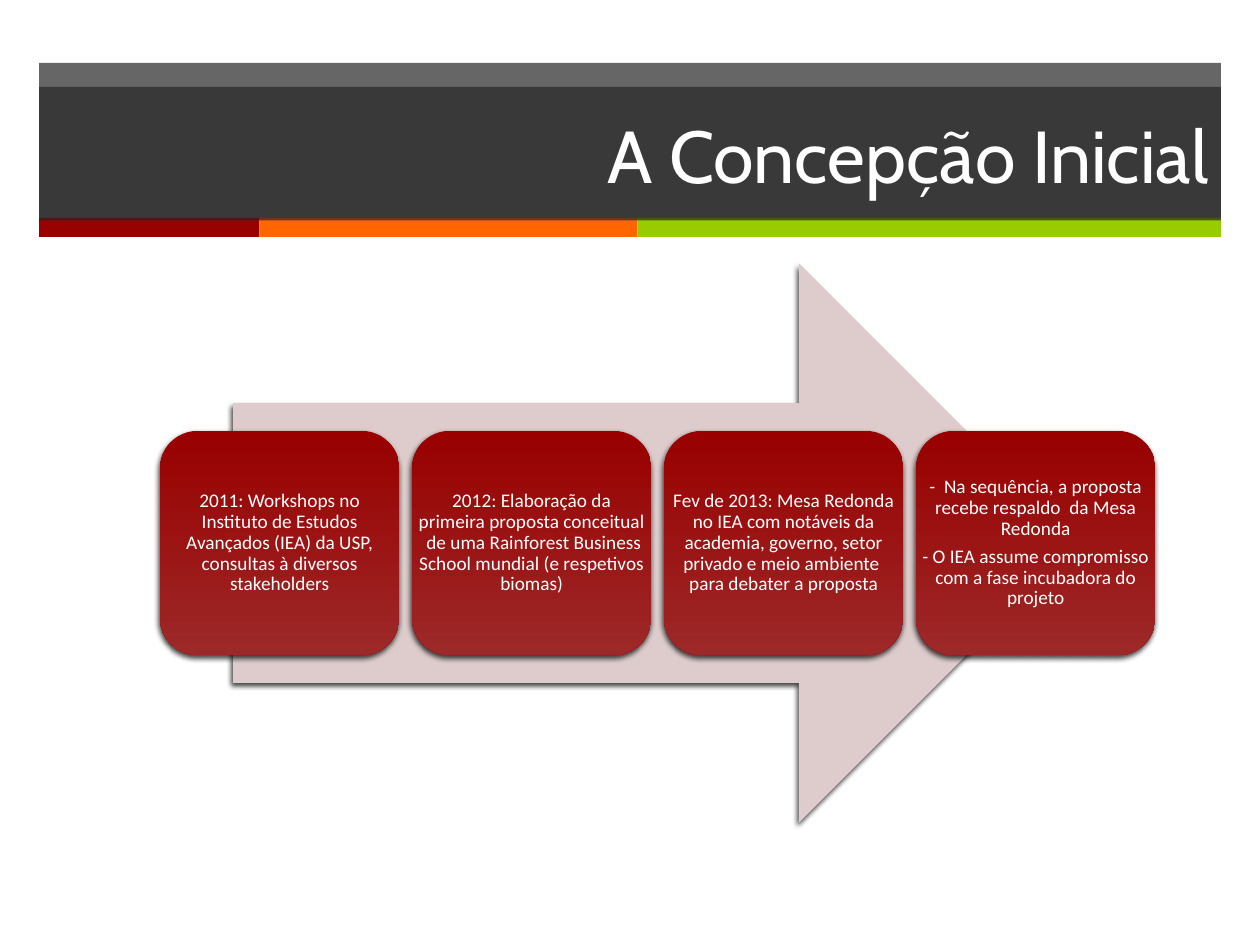
import pptx
import pptx.util
import pptx.dml.color
import pptx.enum.shapes
import pptx.enum.text
import pptx.oxml
from pptx.oxml.ns import nsdecls, qn
from lxml import etree

Inches = pptx.util.Inches
Pt = pptx.util.Pt
Shape = pptx.enum.shapes.MSO_SHAPE
Align = pptx.enum.text.PP_ALIGN
Anchor = pptx.enum.text.MSO_ANCHOR

TITLE = "A Concepção Inicial"
STRIPES = [(1.75, "990000"), (3, "FF6600"), (4.63, "99CC00")]
STEPS = [
    ["2011: Workshops no Instituto de Estudos Avançados (IEA) da USP, consultas à diversos stakeholders"],
    ["2012: Elaboração da primeira proposta conceitual  de uma Rainforest Business School mundial (e respetivos biomas)"],
    ["Fev de 2013: Mesa Redonda no IEA com notáveis da academia, governo, setor privado e meio ambiente  para debater a proposta"],
    ["-  Na sequência, a proposta recebe respaldo  da Mesa Redonda",
     "- O IEA assume compromisso com a fase incubadora do projeto"],
]
BAND_LEFT, BAND_WIDTH = 0.31, 9.38
STEP_LEFT, STEP_TOP, STEP_WIDTH, STEP_HEIGHT, STEP_PITCH = 1.27, 3.42, 1.9, 1.78, 2


def color(value):
    return pptx.dml.color.RGBColor.from_string(value)


def fill_solid(shape, value, opacity=100):
    shape.fill.solid()
    shape.fill.fore_color.rgb = color(value)
    if opacity < 100:
        tint = shape.fill._xPr.find(qn("a:solidFill"))[0]
        etree.SubElement(tint, qn("a:alpha")).set("val", str(opacity * 1000))


def add_block(slide, kind, left, top, width, height):
    shape = slide.shapes.add_shape(kind, Inches(left), Inches(top), Inches(width), Inches(height))
    shape.shadow.inherit = False
    shape.line.fill.background()
    return shape


def add_shadow(shape):
    effects = shape.element.spPr.find(qn("a:effectLst"))
    effects.append(pptx.oxml.parse_xml(
        f'<a:outerShdw {nsdecls("a")} blurRad="{Pt(3)}" dist="{Pt(2)}" dir="{110 * 60000}" rotWithShape="0">'
        '<a:srgbClr val="000000"><a:alpha val="75000"/></a:srgbClr></a:outerShdw>'))


def write(paragraph, text, font, size, alignment):
    paragraph.alignment = alignment
    run = paragraph.add_run()
    run.text = text
    run.font.name = font
    run.font.size = Pt(size)
    run.font.color.rgb = color("FFFFFF")


def add_header(slide):
    band = add_block(slide, Shape.RECTANGLE, BAND_LEFT, 0.5, BAND_WIDTH, 1.24)
    fill_solid(band, "262626", 70)
    left = BAND_LEFT
    for width, value in STRIPES:
        stripe = add_block(slide, Shape.RECTANGLE, left, 1.73, width, 0.15)
        fill_solid(stripe, value)
        left += width

    title = slide.shapes.title
    title.left, title.top = Inches(BAND_LEFT), Inches(0.69)
    title.width, title.height = Inches(BAND_WIDTH), Inches(1.06)
    fill_solid(title, "262626", 70)
    title.text_frame.vertical_anchor = Anchor.MIDDLE
    write(title.text_frame.paragraphs[0], TITLE, "Cabin", 42, Align.RIGHT)
    title.element.getparent().append(title.element)


def add_step(slide, left, texts):
    place = left, STEP_TOP, STEP_WIDTH, STEP_HEIGHT
    card = add_block(slide, Shape.ROUNDED_RECTANGLE, *place)
    card.fill.gradient()
    card.fill.gradient_angle = 270
    for stop, value in zip(card.fill.gradient_stops, ["990000", "9D2828"]):
        stop.color.rgb = color(value)
    add_shadow(card)

    label = slide.shapes.add_textbox(*map(Inches, place))
    frame = label.text_frame
    frame.word_wrap = True
    frame.vertical_anchor = Anchor.MIDDLE
    frame.margin_left = frame.margin_right = Inches(0.05)
    frame.margin_top = frame.margin_bottom = Inches(0.05)
    for index, text in enumerate(texts):
        paragraph = frame.add_paragraph() if index else frame.paragraphs[0]
        paragraph.line_spacing = 0.9
        paragraph.space_after = Pt(4)
        write(paragraph, text, "Calibri", 11, Align.CENTER)


def main():
    presentation = pptx.Presentation()
    presentation.slide_width, presentation.slide_height = Inches(10), Inches(7.5)
    slide = presentation.slides.add_slide(presentation.slide_layouts[5])
    add_header(slide)
    arrow = add_block(slide, Shape.RIGHT_ARROW, 1.85, 2.09, 6.71, 4.44)
    fill_solid(arrow, "DECCCC")
    add_shadow(arrow)
    for index, texts in enumerate(STEPS):
        add_step(slide, STEP_LEFT + index * STEP_PITCH, texts)
    presentation.save("out.pptx")


if __name__ == "__main__":
    main()
